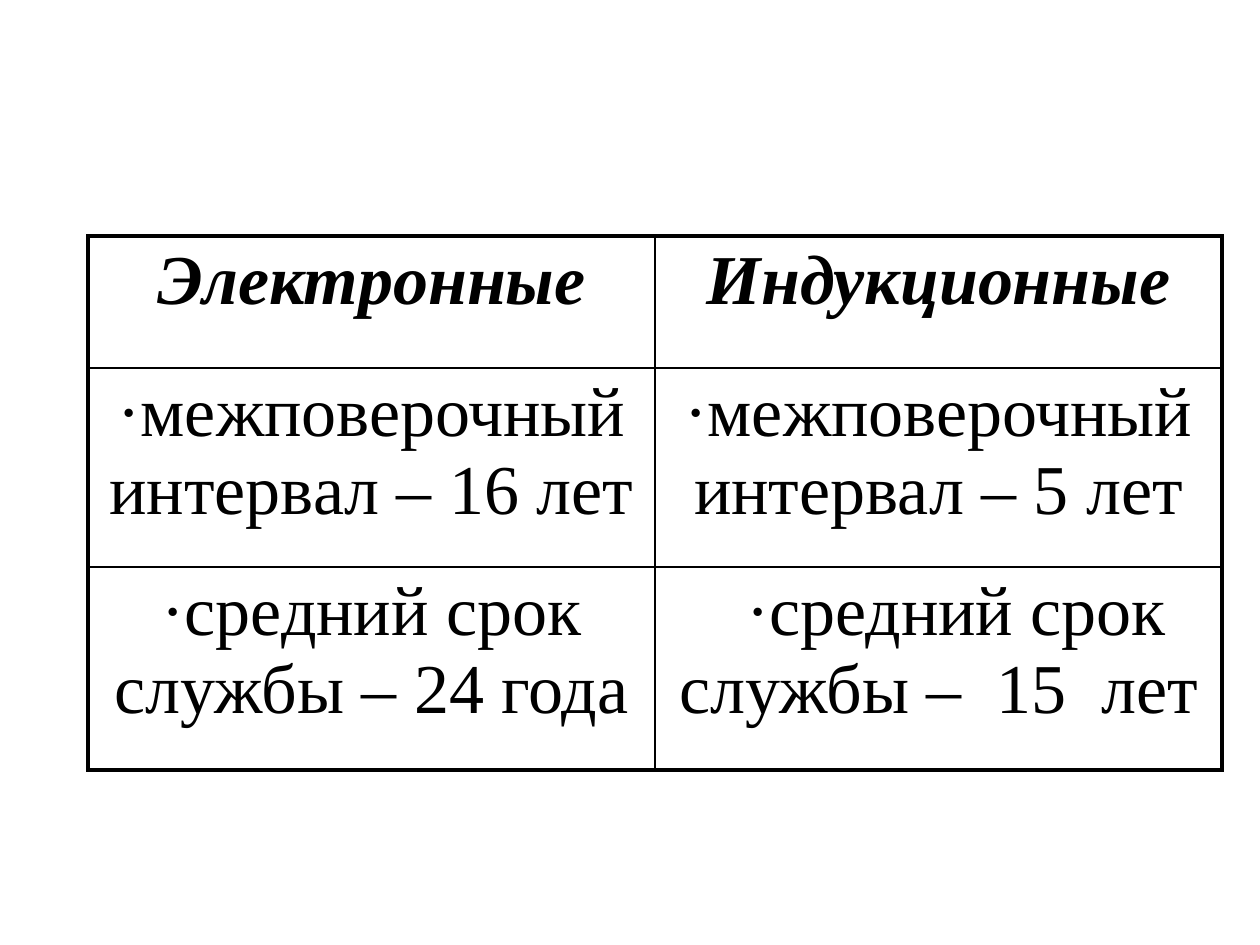
from lxml.etree import SubElement
from pptx import Presentation
from pptx.dml.color import RGBColor
from pptx.enum.text import MSO_ANCHOR, PP_ALIGN
from pptx.oxml.ns import qn
from pptx.util import Emu, Pt

PX_PER_INCH = 126
THIN, THICK = 1, 2.25


def px(length):
    return Emu(round(length * 914400 / PX_PER_INCH))


def color(hex_code):
    return RGBColor.from_string(hex_code)


class SlideBuilder:
    font_name = "Times New Roman"
    font_size = 40
    ink = "000000"

    def __init__(self, slide):
        self.slide = slide

    def table(self, left, top, column_widths, row_heights, rows):
        frame = self.slide.shapes.add_table(
            len(rows), len(column_widths), px(left), px(top),
            px(sum(column_widths)), px(sum(row_heights)))
        grid = frame.table
        for column, width in zip(grid.columns, column_widths):
            column.width = px(width)
        for row, height in zip(grid.rows, row_heights):
            row.height = px(height)
        last_row, last_column = len(rows) - 1, len(column_widths) - 1
        for r, texts in enumerate(rows):
            for c, text in enumerate(texts):
                cell = grid.cell(r, c)
                self.cell_text(cell, text, heading=r == 0)
                outer_edges = {"L": c == 0, "R": c == last_column,
                               "T": r == 0, "B": r == last_row}
                self.cell_borders(cell, outer_edges)
                cell.fill.background()
        return grid

    def cell_text(self, cell, text, heading):
        cell.vertical_anchor = MSO_ANCHOR.TOP
        paragraph = cell.text_frame.paragraphs[0]
        paragraph.text = text
        paragraph.alignment = PP_ALIGN.CENTER
        font = paragraph.runs[0].font
        font.name = self.font_name
        font.size = Pt(self.font_size)
        font.bold = font.italic = heading
        font.color.rgb = color(self.ink)

    def cell_borders(self, cell, outer_edges):
        """Draw thick lines on outer edges and thin lines inside."""
        properties = cell._tc.get_or_add_tcPr()
        for side, is_outer in outer_edges.items():
            width = Pt(THICK if is_outer else THIN)
            line = SubElement(properties, qn(f"a:ln{side}"), w=str(width))
            fill = SubElement(line, qn("a:solidFill"))
            SubElement(fill, qn("a:srgbClr"), val=self.ink)

    def first_line_indent(self, cell, length):
        properties = cell.text_frame.paragraphs[0]._p.get_or_add_pPr()
        properties.set("indent", str(px(length)))


def main():
    deck = Presentation()
    deck.slide_width, deck.slide_height = px(1260), px(945)
    builder = SlideBuilder(deck.slides.add_slide(deck.slide_layouts[6]))
    meter_comparison = builder.table(88, 236, [567, 567], [132, 199, 203], [
        ("Электронные", "Индукционные"),
        ("·межповерочный интервал – 16 лет", "·межповерочный интервал – 5 лет"),
        ("·средний срок службы – 24 года", "·средний срок службы –  15  лет"),
    ])
    builder.first_line_indent(meter_comparison.cell(2, 1), 35)
    deck.save("out.pptx")


if __name__ == "__main__":
    main()
